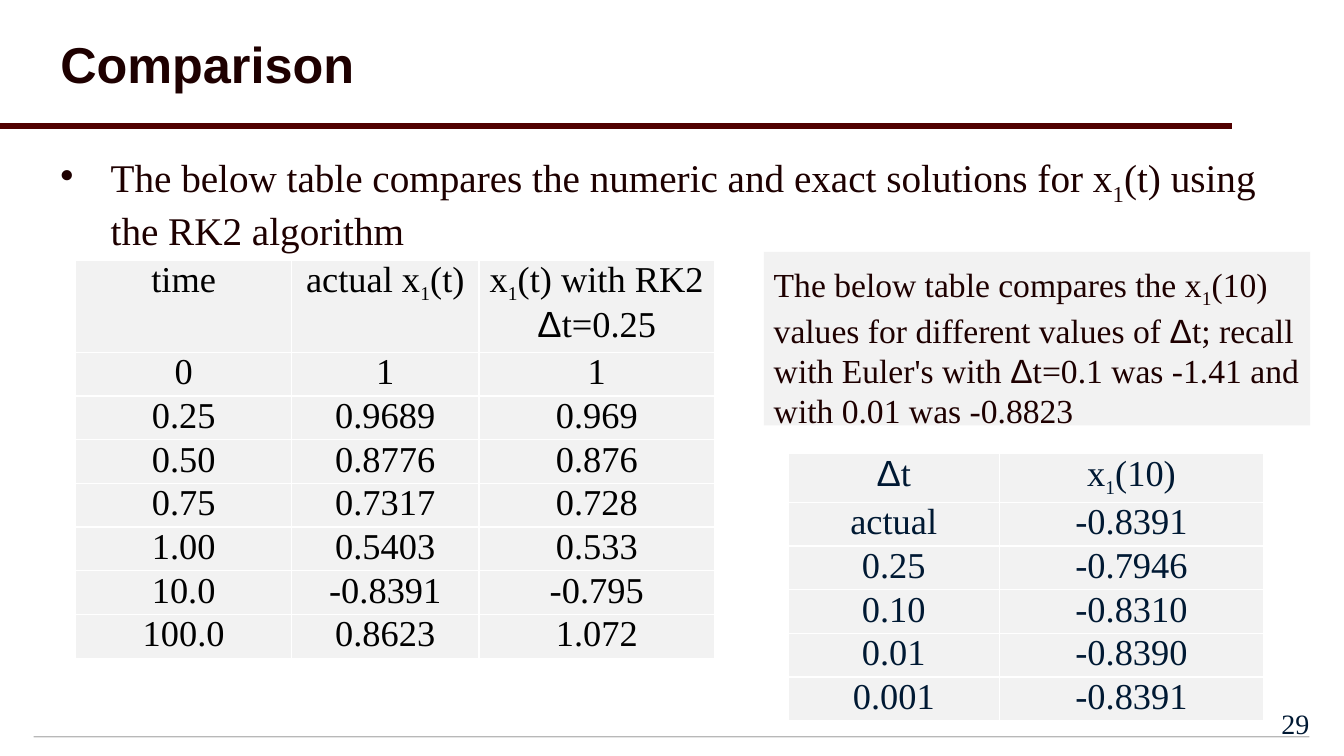
"""Build the slide comparing RK2 results with the exact solution."""
from itertools import groupby

from lxml.etree import SubElement
from pptx import Presentation
from pptx.dml.color import RGBColor
from pptx.enum.shapes import MSO_CONNECTOR, MSO_SHAPE
from pptx.enum.text import MSO_ANCHOR, PP_ALIGN
from pptx.oxml.ns import qn
from pptx.util import Cm, Pt

DARK, NAVY, PALE = "1E0000", "001933", "F2F2F2"
SERIF, SANS = "Times New Roman", "Arial"


def paint(code):
    """Turn a hex string into a colour."""
    return RGBColor.from_string(code)


def write(para, text, size, code, face=SERIF, bold=False, small=None):
    """Add runs, setting ₁ as a subscript and Δ in the sans face."""
    kinds = groupby(text, lambda c: c if c in "₁Δ" else "")
    for kind, chars in kinds:
        run = para.add_run()
        run.text = "".join(chars).replace("₁", "1")
        form = {
            "name": SANS if kind == "Δ" else face,
            "size": Pt(small if small and kind == "₁" else size),
            "bold": bold,
        }
        for key, value in form.items():
            setattr(run.font, key, value)
        run.font.color.rgb = paint(code)
        if kind == "₁":
            run._r.get_or_add_rPr().set("baseline", "-25000")


deck = Presentation()
deck.slide_width, deck.slide_height = Cm(33.87), Cm(19.05)
slide = deck.slides.add_slide(deck.slide_layouts[6])
shapes = slide.shapes

foot = shapes.add_shape(MSO_SHAPE.RECTANGLE, Cm(0.85), Cm(18.55), Cm(32.15), Cm(0.03))
foot.shadow.inherit = False
foot.fill.solid()
foot.fill.fore_color.rgb = paint("B8B8B8")
foot.line.fill.background()

rule = shapes.add_connector(MSO_CONNECTOR.STRAIGHT, 0, Cm(3.18), Cm(31.05), Cm(3.18))
rule.line.color.rgb = paint("500000")
rule.line.width = Pt(4)
SubElement(rule._element.spPr, qn("a:effectLst"))

title = shapes.add_textbox(Cm(1.27), Cm(0.2), Cm(31.05), Cm(2.97)).text_frame
title.word_wrap = True
title.vertical_anchor = MSO_ANCHOR.MIDDLE
title.paragraphs[0].line_spacing = 0.9
write(title.paragraphs[0], "Comparison", 36, DARK, SANS, True)

body = shapes.add_textbox(Cm(1.27), Cm(3.56), Cm(31.4), Cm(2.8)).text_frame
body.word_wrap = True
body.margin_top = Cm(0.3)
lead = body.paragraphs[0]
props = lead._p.get_or_add_pPr()
props.set("marL", str(Cm(1.27)))
props.set("indent", str(-Cm(1.27)))
tint = SubElement(props, qn("a:buClr"))
SubElement(tint, qn("a:srgbClr"), val=DARK)
SubElement(props, qn("a:buChar"), char="•")
write(lead, "The below table compares the numeric and exact solutions for x₁(t) "
      "using the RK2 algorithm", 28, DARK)

tables = [
    {
        "at": (1.91, 6.55), "cols": (5.44, 4.72, 5.94),
        "rows": (2.11, 1.07), "ink": "000000",
        "data": [
            ("time", "actual x₁(t)", "x₁(t) with RK2\nΔt=0.25"),
            ("0", "1", "1"),
            ("0.25", "0.9689", "0.969"),
            ("0.50", "0.8776", "0.876"),
            ("0.75", "0.7317", "0.728"),
            ("1.00", "0.5403", "0.533"),
            ("10.0", "-0.8391", "-0.795"),
            ("100.0", "0.8623", "1.072"),
        ],
    },
    {
        "at": (19.86, 11.43), "cols": (5.33, 6.65),
        "rows": (0.89, 0.89), "ink": NAVY,
        "data": [
            ("Δt", "x₁(10)"),
            ("actual", "-0.8391"),
            ("0.25", "-0.7946"),
            ("0.10", "-0.8310"),
            ("0.01", "-0.8390"),
            ("0.001", "-0.8391"),
        ],
    },
]
pads = {
    "margin_left": Cm(0.18), "margin_right": Cm(0.18),
    "margin_top": 0, "margin_bottom": 0,
}
for item in tables:
    data, cols = item["data"], item["cols"]
    head, rest = item["rows"]
    left, top = item["at"]
    high = head + rest * (len(data) - 1)
    grid = shapes.add_table(len(data), len(cols), Cm(left), Cm(top),
                            Cm(sum(cols)), Cm(high)).table
    grid.first_row = grid.horz_banding = False
    for col, wide in zip(grid.columns, cols):
        col.width = Cm(wide)
    for i, texts in enumerate(data):
        grid.rows[i].height = Cm(rest if i else head)
        for j, text in enumerate(texts):
            cell = grid.cell(i, j)
            for key, value in pads.items():
                setattr(cell, key, value)
            for side in ("lnL", "lnR", "lnT", "lnB"):
                edge = SubElement(cell._tc.get_or_add_tcPr(), qn("a:" + side),
                                  w=str(Pt(1)))
                SubElement(SubElement(edge, qn("a:solidFill")),
                           qn("a:srgbClr"), val="FFFFFF")
            cell.fill.solid()
            cell.fill.fore_color.rgb = paint(PALE)
            for k, line in enumerate(text.split("\n")):
                frame = cell.text_frame
                para = frame.add_paragraph() if k else frame.paragraphs[0]
                para.alignment = PP_ALIGN.CENTER
                write(para, line, 26, item["ink"], small=24)

note = shapes.add_shape(MSO_SHAPE.RECTANGLE, Cm(19.25), Cm(6.35), Cm(13.77), Cm(4.37))
note.shadow.inherit = False
note.fill.solid()
note.fill.fore_color.rgb = paint(PALE)
note.line.fill.background()
frame = note.text_frame
frame.word_wrap = True
frame.vertical_anchor = MSO_ANCHOR.TOP
frame.margin_top = Cm(0.3)
frame.paragraphs[0].alignment = PP_ALIGN.LEFT
write(frame.paragraphs[0], "The below table compares the x₁(10) values for different "
      "values of Δt; recall with Euler's with Δt=0.1 was -1.41 and "
      "with 0.01 was -0.8823", 24, DARK)

page = shapes.add_textbox(Cm(31.55), Cm(17.58), Cm(1.7), Cm(1.27)).text_frame
page.word_wrap = True
page.vertical_anchor = MSO_ANCHOR.MIDDLE
page.paragraphs[0].alignment = PP_ALIGN.RIGHT
write(page.paragraphs[0], "29", 20, NAVY)

deck.save("out.pptx")
